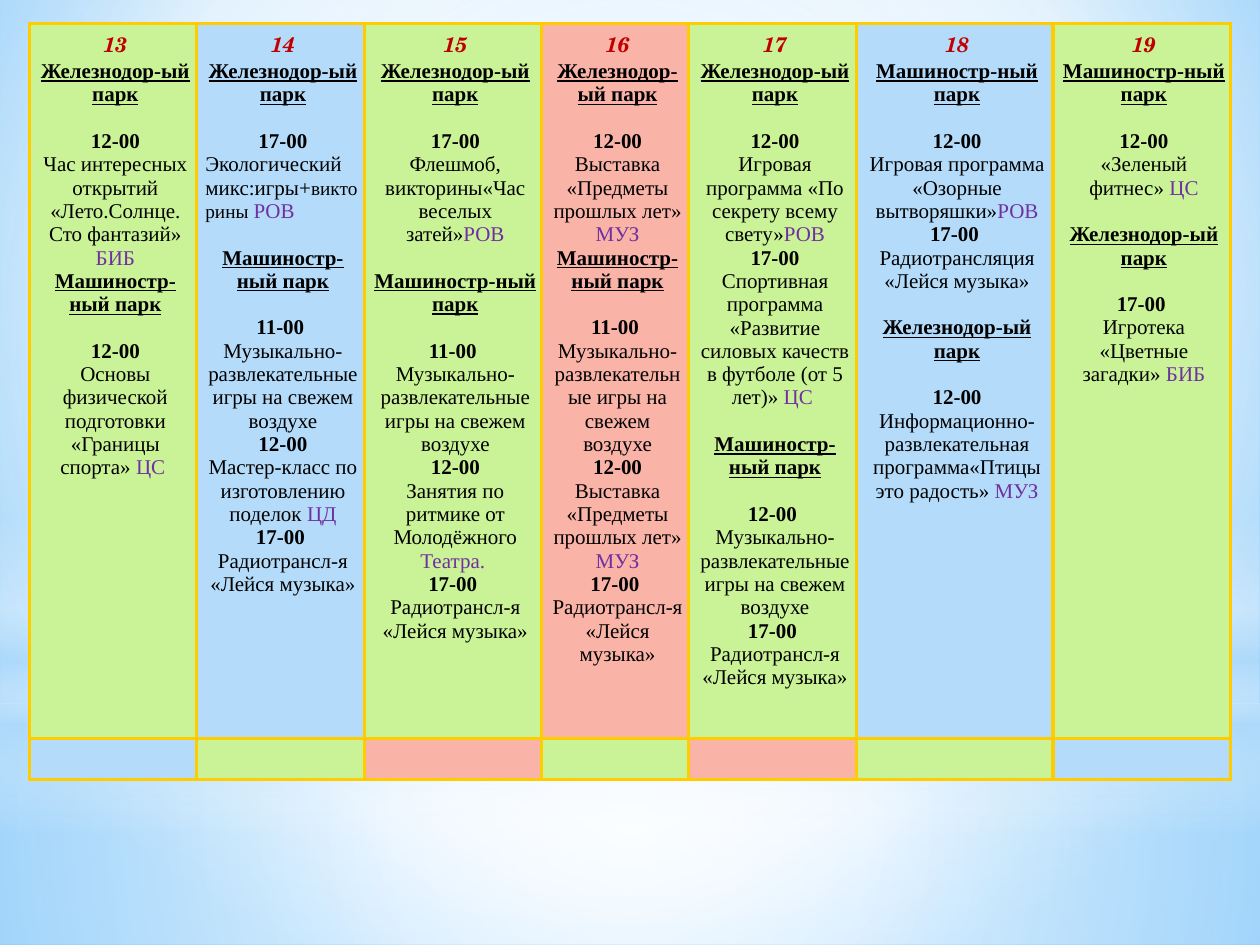
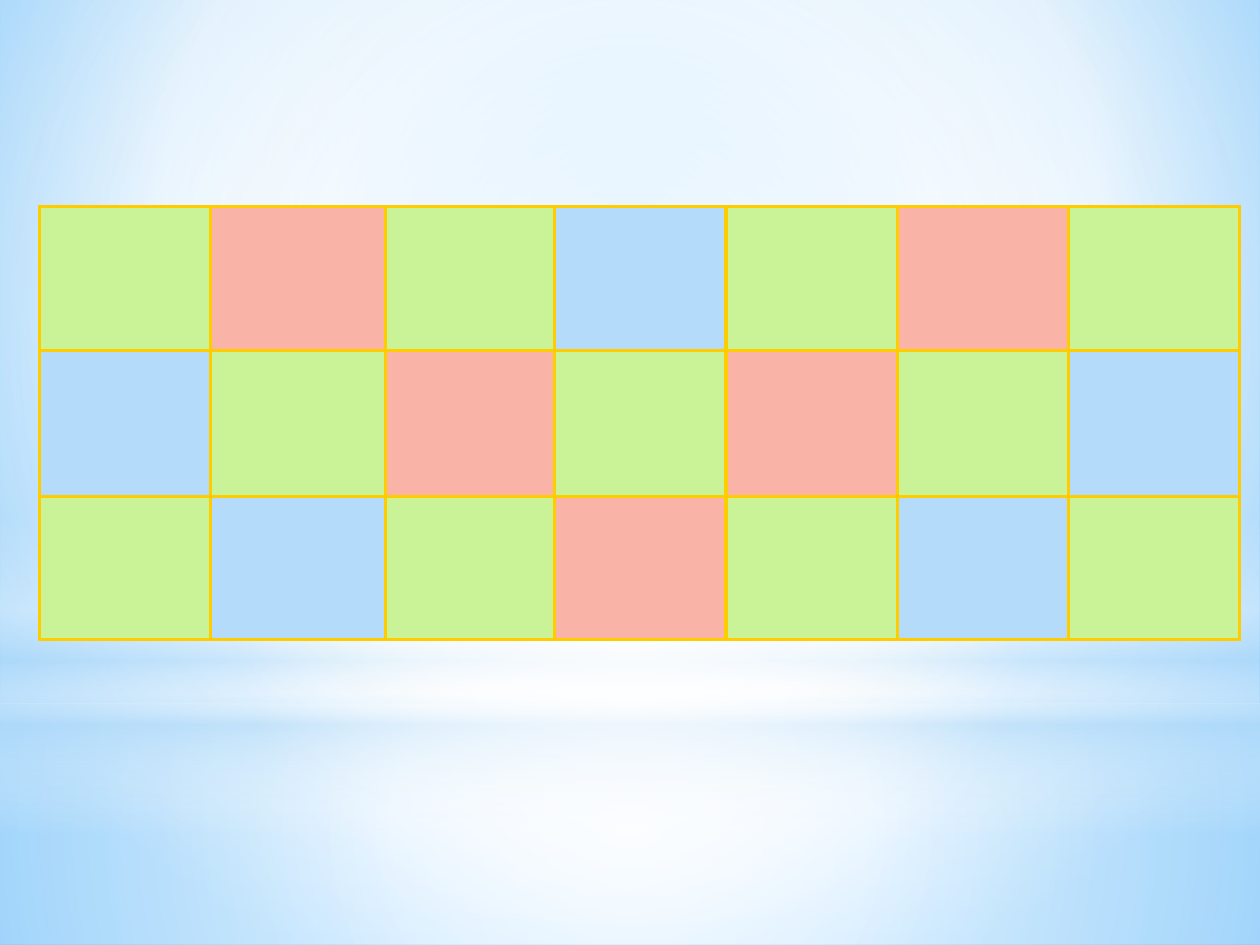
import dataclasses

import pptx
import pptx.dml.color
import pptx.enum.shapes
import pptx.enum.text
import pptx.oxml
import pptx.oxml.ns
import pptx.presentation
import pptx.shapes.autoshape
import pptx.slide
import pptx.table
import pptx.text.text
import pptx.util

Pt = pptx.util.Pt
RGB = pptx.dml.color.RGBColor
SHAPE = pptx.enum.shapes.MSO_SHAPE
ALIGN = pptx.enum.text.PP_ALIGN

# Shared colours and type
GREEN = RGB(0xCA, 0xF2, 0x97)
BLUE = RGB(0xB4, 0xDC, 0xFA)
PINK = RGB(0xF9, 0xB3, 0xA7)
GOLD = RGB(0xFF, 0xCC, 0x00)
RED = RGB(0xC0, 0x00, 0x00)
PURPLE = RGB(0x70, 0x30, 0xA0)
BLACK = RGB(0x00, 0x00, 0x00)
WHITE = RGB(0xFF, 0xFF, 0xFF)
SKY = RGB(0x9E, 0xD5, 0xFF)
DEEP = RGB(0x5B, 0xB9, 0xFF)
FILLS = {"G": GREEN, "B": BLUE, "P": PINK}
DATE_FONT = "TeX Gyre Schola"
BODY_FONT = "Times New Roman"
SIZE = Pt(12)
GAP = Pt(13.3)

RAIL = "Железнодор-ый парк"
WORKS = "Машиностр-ный парк"
GAMES = "Музыкально-развлекательные игры на свежем воздухе"
RADIO = "Радиотрансл-я «Лейся музыка»"


@dataclasses.dataclass
class Stop:
    pos: int
    color: RGB
    alpha: int = 100


@dataclasses.dataclass
class Glow:
    """A gradient; without a focus it runs from top to bottom."""
    stops: list[Stop]
    focus: tuple[int, int, int, int] | None = (50, 50, 50, 50)


@dataclasses.dataclass
class Band:
    kind: SHAPE
    top: float
    height: float
    glow: Glow


@dataclasses.dataclass
class Event:
    time: str
    text: str
    host: str = ""
    small: str = ""  # smaller ending, set flush left


@dataclasses.dataclass
class Park:
    name: str
    events: list[Event]
    gap: bool = False


@dataclasses.dataclass
class Day:
    date: str
    parks: list[Park]


@dataclasses.dataclass
class Grid:
    left: float
    top: float
    cols: list[float]
    rows: list[float]
    fills: list[str]


BACK = Glow([Stop(0, SKY), Stop(60, WHITE), Stop(100, DEEP)], (20, 10, 20, 60))
BANDS = [
    Band(SHAPE.RECTANGLE, 401.8, 138.2,
         Glow([Stop(0, WHITE, 91), Stop(37, WHITE, 76), Stop(100, BLUE, 79)])),
    Band(SHAPE.RECTANGLE, 0, 401.8,
         Glow([Stop(0, WHITE, 89), Stop(48, WHITE, 62), Stop(100, BLUE, 79)])),
    Band(SHAPE.RECTANGLE, 296.6, 180,
         Glow([Stop(0, WHITE, 0), Stop(29, WHITE, 30), Stop(45, BLUE, 40),
               Stop(55, WHITE, 26), Stop(65, BLUE, 60), Stop(100, WHITE, 0)], None)),
    Band(SHAPE.OVAL, 126, 401.8, Glow([Stop(0, WHITE), Stop(56, WHITE, 0)])),
]

DAYS = [
    Day("13", [
        Park(RAIL, [Event("12-00", "Час интересных открытий «Лето.Солнце.\nСто фантазий» ", "БИБ")]),
        Park(WORKS, [Event("12-00", "Основы физической подготовки «Границы спорта»", " ЦС ")]),
    ]),
    Day("14", [
        Park(RAIL, [Event("17-00", "Экологический микс:игры+", "РОВ", "викторины ")]),
        Park(WORKS, [
            Event("11-00 ", GAMES),
            Event("12-00", "Мастер-класс по изготовлению поделок ", "ЦД"),
            Event("17-00 ", RADIO)], True),
    ]),
    Day("15", [
        Park(RAIL, [Event("17-00", "Флешмоб, викторины«Час веселых затей»", "РОВ")]),
        Park(WORKS, [
            Event("11-00 ", GAMES),
            Event("12-00", "Занятия по ритмике от Молодёжного ", "Театра. "),
            Event("17-00 ", RADIO)], True),
    ]),
    Day("16", [
        Park(RAIL, [Event("12-00", "Выставка «Предметы прошлых лет» ", "МУЗ")]),
        Park(WORKS, [
            Event("11-00 ", GAMES),
            Event("12-00", "Выставка «Предметы прошлых лет» ", "МУЗ"),
            Event("17-00 ", RADIO)]),
    ]),
    Day("17", [
        Park(RAIL, [
            Event("12-00", "Игровая программа «По секрету всему свету»", "РОВ"),
            Event("17-00", "Спортивная программа «Развитие силовых качеств в футболе (от 5 лет)» ", "ЦС ")]),
        Park(WORKS, [Event("12-00 ", GAMES), Event("17-00 ", RADIO)], True),
    ]),
    Day("18", [
        Park(WORKS, [
            Event("12-00", "Игровая программа «Озорные вытворяшки»", "РОВ"),
            Event("17-00 ", "Радиотрансляция «Лейся музыка»")]),
        Park(RAIL, [
            Event("12-00", "Информационно-развлекательная программа«Птицы это радость» ", "МУЗ")], True),
    ]),
    Day("19", [
        Park(WORKS, [Event("12-00", "«Зеленый фитнес» ", "ЦС")]),
        Park(RAIL, [Event("17-00 ", "Игротека «Цветные загадки» ", "БИБ")], True),
    ]),
]

WEEK = Grid(16.7, 13.7, [95.8, 95.8, 101.2, 84.2, 95.8, 112.3, 101.2],
            [408.2, 23.4], ["GBGPGBG", "BGPGPGB"])
BLANK = Grid(22.5, 118, [97.9, 100.1, 96.5, 97.9, 97.9, 97.9, 97.9],
             [82.1, 83.5, 82.1], ["GPGBGPG", "BGPGPGB", "GBGPGBG"])


def make(tag: str, **attrs: object):
    """Make an element of the drawing namespace."""
    node = pptx.oxml.parse_xml(f"<{tag} {pptx.oxml.ns.nsdecls('a')}/>")
    for key, value in attrs.items():
        node.set(key, str(value))
    return node


def tint(color: RGB, alpha: int = 100):
    node = make("a:srgbClr", val=color)
    if alpha < 100:
        node.append(make("a:alpha", val=alpha * 1000))
    return node


def set_glow(owner: pptx.slide.SlideMaster | pptx.shapes.autoshape.Shape,
             fill: pptx.dml.fill.FillFormat, glow: Glow) -> None:
    fill.gradient()
    grad = owner.element.find(".//" + pptx.oxml.ns.qn("a:gradFill"))
    grad.clear()
    grad.set("rotWithShape", "1")
    stops = make("a:gsLst")
    for stop in glow.stops:
        node = make("a:gs", pos=stop.pos * 1000)
        node.append(tint(stop.color, stop.alpha))
        stops.append(node)
    grad.append(stops)
    if glow.focus:
        course = make("a:path", path="circle")
        sides = {side: part * 1000 for side, part in zip("ltrb", glow.focus)}
        course.append(make("a:fillToRect", **sides))
    else:
        course = make("a:lin", ang=90 * 60000, scaled=0)
    grad.append(course)


def dress_master(deck: pptx.presentation.Presentation, slide: pptx.slide.Slide) -> None:
    """Set the backdrop once, on the master that all slides share."""
    master = deck.slide_master
    set_glow(master, master.background.fill, BACK)
    for index, band in enumerate(BANDS):
        shape = slide.shapes.add_shape(
            band.kind, 0, Pt(band.top), deck.slide_width, Pt(band.height))
        shape.shadow.inherit = False
        shape.line.fill.background()
        set_glow(shape, shape.fill, band.glow)
        shape.element.nvSpPr.cNvPr.id = 20 + index
        master.shapes.element.append(shape.element)


def style_cell(cell: pptx.table._Cell, color: RGB) -> None:
    props = cell._tc.get_or_add_tcPr()
    for side in "LRTB":
        edge = make(f"a:ln{side}", w=Pt(2))
        paint = make("a:solidFill")
        paint.append(tint(GOLD))
        edge.append(paint)
        props.append(edge)
    cell.fill.solid()
    cell.fill.fore_color.rgb = color
    cell.margin_left = Pt(4.9)
    cell.margin_right = Pt(2.2)
    cell.margin_top = cell.margin_bottom = Pt(2.2 if cell.text else 0)


def add_grid(slide: pptx.slide.Slide, grid: Grid, days: list[Day]) -> None:
    table = slide.shapes.add_table(
        len(grid.rows), len(grid.cols), Pt(grid.left), Pt(grid.top),
        Pt(sum(grid.cols)), Pt(sum(grid.rows))).table
    table.first_row = table.horz_banding = False
    for col, width in zip(table.columns, grid.cols):
        col.width = Pt(width)
    for row, height in zip(table.rows, grid.rows):
        row.height = Pt(height)
    for index, day in enumerate(days):
        write_day(table.cell(0, index).text_frame, day)
    for row, keys in enumerate(grid.fills):
        for col, key in enumerate(keys):
            style_cell(table.cell(row, col), FILLS[key])


def style_line(line: pptx.text.text._Paragraph, bold: bool = False, gap: bool = False) -> None:
    line.alignment = ALIGN.CENTER
    line.font.name = BODY_FONT
    line.font.size = SIZE
    line.font.bold = bold
    line.font.color.rgb = BLACK
    if gap:
        line.space_before = GAP


def add_line(frame: pptx.text.text.TextFrame, text: str, bold: bool = False,
             gap: bool = False) -> pptx.text.text._Paragraph:
    line = frame.add_paragraph()
    line.add_run().text = text
    style_line(line, bold, gap)
    return line


def write_event(frame: pptx.text.text.TextFrame, event: Event, gap: bool) -> None:
    add_line(frame, event.time, True, gap)
    for text in event.text.split("\n"):
        line = add_line(frame, text)
    if event.small:
        line.alignment = ALIGN.LEFT
        run = line.add_run()
        run.text = event.small
        run.font.size = Pt(11)
    if event.host:
        run = line.add_run()
        run.text = event.host
        run.font.color.rgb = PURPLE


def write_day(frame: pptx.text.text.TextFrame, day: Day) -> None:
    date = frame.paragraphs[0]
    date.add_run().text = day.date
    style_line(date, True)
    date.font.name = DATE_FONT
    date.font.italic = True
    date.font.color.rgb = RED
    for park in day.parks:
        add_line(frame, park.name, True, park.gap).font.underline = True
        for index, event in enumerate(park.events):
            write_event(frame, event, index == 0)


def main() -> None:
    deck = pptx.Presentation()
    deck.slide_width, deck.slide_height = Pt(720), Pt(540)
    layout = deck.slide_layouts[6]
    first, second = (deck.slides.add_slide(layout) for _ in range(2))
    dress_master(deck, first)
    add_grid(first, WEEK, DAYS)
    add_grid(second, BLANK, [])
    deck.save("out.pptx")


if __name__ == "__main__":
    main()
